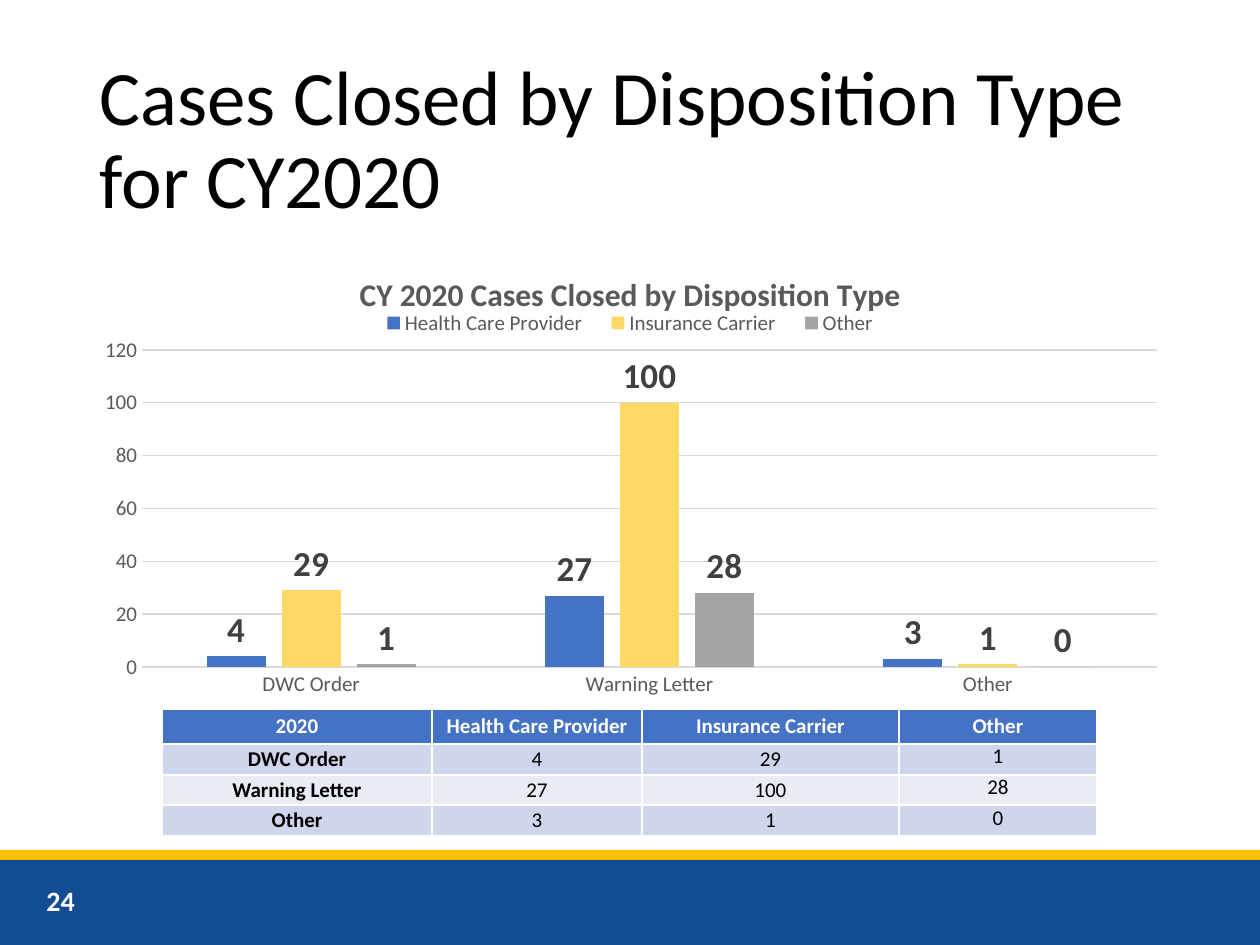
"""Build the slide on cases closed by disposition type."""
from typing import NamedTuple

from lxml import etree
from pptx import Presentation
from pptx.chart.data import CategoryChartData
from pptx.dml.color import RGBColor
from pptx.enum.chart import XL_CHART_TYPE, XL_LABEL_POSITION, XL_LEGEND_POSITION, XL_TICK_MARK
from pptx.enum.shapes import MSO_SHAPE
from pptx.enum.text import MSO_ANCHOR, MSO_AUTO_SIZE, PP_ALIGN
from pptx.oxml import parse_xml
from pptx.oxml.ns import nsdecls, qn
from pptx.util import Emu, Inches, Pt

RECTANGLE = MSO_SHAPE.RECTANGLE
COLUMNS = XL_CHART_TYPE.COLUMN_CLUSTERED
OUTSIDE_END = XL_LABEL_POSITION.OUTSIDE_END
LEGEND_BOTTOM = XL_LEGEND_POSITION.BOTTOM
NO_TICK = XL_TICK_MARK.NONE
TOP, MIDDLE = MSO_ANCHOR.TOP, MSO_ANCHOR.MIDDLE
LEFT, CENTER = PP_ALIGN.LEFT, PP_ALIGN.CENTER
NO_AUTOFIT = MSO_AUTO_SIZE.NONE

FONT = "Calibri"
PX = 914400 / 126
COLORS = {
    "black": "000000", "white": "FFFFFF", "navy": "124C95", "gold": "FFC000",
    "grid": "D9D9D9", "gray_text": "595959", "label": "404040",
    "blue": "4472C4", "yellow": "FFD966", "gray": "A5A5A5",
    "odd_row": "CFD5EA", "even_row": "E9EBF5",
}


class Box(NamedTuple):
    left: int
    top: int
    width: int
    height: int


class Band(NamedTuple):
    box: Box
    color: str


class Series(NamedTuple):
    name: str
    values: tuple[int, ...]
    color: str


BANDS = [Band(Box(0, 860, 1260, 85), "navy"), Band(Box(0, 850, 1260, 10), "gold")]
CHART_BOX = Box(87, 252, 1086, 457)
PLOT_BOX = Box(55, 98, 1015, 317)
HEADING_BOX = Box(267, 15, 543, 37)
LEGEND_BOX = Box(278, 57, 530, 28)
CATEGORIES = ["DWC Order", "Warning Letter", "Other"]
SERIES = [
    Series("Health Care Provider", (4, 27, 3), "blue"),
    Series("Insurance Carrier", (29, 100, 1), "yellow"),
    Series("Other", (1, 28, 0), "gray"),
]
COLUMN_WIDTHS = [270, 210, 257, 198]
ROW_HEIGHTS = [35, 31, 30, 30]


def px(length: int) -> Emu:
    return Emu(round(length * PX))


def rgb(name: str) -> RGBColor:
    return RGBColor.from_string(COLORS[name])


def emu_box(box: Box) -> list[Emu]:
    return [px(length) for length in box]


def style_font(font, size: int, color: str, bold: bool = False) -> None:
    font.name, font.size, font.bold = FONT, Pt(size), bold
    font.color.rgb = rgb(color)


def draw_band(slide, band: Band) -> None:
    shape = slide.shapes.add_shape(RECTANGLE, *emu_box(band.box))
    shape.shadow.inherit = False
    shape.fill.solid()
    shape.fill.fore_color.rgb = rgb(band.color)
    shape.line.fill.background()


def draw_title(slide, text: str, box: Box) -> None:
    title = slide.shapes.title
    title.left, title.top, title.width, title.height = emu_box(box)
    frame = title.text_frame
    frame.text = text
    frame.auto_size = NO_AUTOFIT
    frame.vertical_anchor = MIDDLE
    paragraph = frame.paragraphs[0]
    paragraph.alignment = LEFT
    paragraph.line_spacing = 0.9
    style_font(paragraph.runs[0].font, 44, "black")


def draw_page_number(slide, number: str, box: Box) -> None:
    frame = slide.shapes.add_textbox(*emu_box(box)).text_frame
    frame.word_wrap = True
    frame.vertical_anchor = MIDDLE
    frame.text = number
    style_font(frame.paragraphs[0].runs[0].font, 16, "white", True)


def set_layout(element, index: int, box: Box, inner: bool = False) -> None:
    for old in element.findall(qn("c:layout")):
        element.remove(old)
    target = '<c:layoutTarget val="inner"/>' if inner else ""
    totals = (CHART_BOX.width, CHART_BOX.height) * 2
    sizes = "".join(f'<c:{key} val="{length / total}"/>'
                    for key, length, total in zip("xywh", box, totals))
    element.insert(index, parse_xml(
        f'<c:layout {nsdecls("c")}><c:manualLayout>{target}'
        f'<c:xMode val="edge"/><c:yMode val="edge"/>{sizes}</c:manualLayout></c:layout>'))


def draw_chart(slide, heading: str) -> None:
    data = CategoryChartData()
    data.categories = CATEGORIES
    for series in SERIES:
        data.add_series(series.name, series.values)
    chart = slide.shapes.add_chart(COLUMNS, *emu_box(CHART_BOX), data).chart
    style_font(chart.font, 10, "black")

    title = chart.chart_title
    title.text_frame.text = heading
    style_font(title.text_frame.paragraphs[0].runs[0].font, 18, "gray_text", True)
    chart.has_legend = True
    chart.legend.position = LEGEND_BOTTOM
    chart.legend.include_in_layout = False
    style_font(chart.legend.font, 12, "gray_text")

    for axis in (chart.category_axis, chart.value_axis):
        axis.major_tick_mark = axis.minor_tick_mark = NO_TICK
        style_font(axis.tick_labels.font, 12, "gray_text")
    value_axis = chart.value_axis
    value_axis.minimum_scale, value_axis.maximum_scale, value_axis.major_unit = 0, 120, 20
    value_axis.format.line.fill.background()
    for line in (chart.category_axis.format.line, value_axis.major_gridlines.format.line):
        line.color.rgb = rgb("grid")
        line.width = Pt(0.75)

    plot = chart.plots[0]
    plot.vary_by_categories = False
    plot.gap_width, plot.overlap = 219, -27
    for column, series in zip(plot.series, SERIES):
        column.format.fill.solid()
        column.format.fill.fore_color.rgb = rgb(series.color)
        labels = column.data_labels
        labels.show_value = True
        labels.position = OUTSIDE_END
        style_font(labels.font, 20, "label", True)

    set_layout(plot._element.getparent(), 0, PLOT_BOX, inner=True)
    set_layout(title._element, 1, HEADING_BOX)
    set_layout(chart.legend._element, 1, LEGEND_BOX)


def add_borders(cell) -> None:
    properties = cell._tc.get_or_add_tcPr()
    for side in "LRTB":
        line = etree.SubElement(properties, qn(f"a:ln{side}"), w=str(Pt(1)))
        fill = etree.SubElement(line, qn("a:solidFill"))
        etree.SubElement(fill, qn("a:srgbClr"), val=COLORS["white"])


def draw_cell(cell, text: str, row: int, column: int) -> None:
    header, heading = row == 0, row == 0 or column == 0
    horizontal, vertical = (0.03, 0.02) if heading else (0.04, 0)
    cell.margin_left = cell.margin_right = Inches(horizontal)
    cell.margin_top = cell.margin_bottom = Inches(vertical)
    cell.vertical_anchor = TOP if column == len(SERIES) and not header else MIDDLE
    add_borders(cell)
    cell.fill.solid()
    cell.fill.fore_color.rgb = rgb("blue" if header else "odd_row" if row % 2 else "even_row")
    cell.text_frame.text = text
    paragraph = cell.text_frame.paragraphs[0]
    paragraph.alignment = CENTER
    style_font(paragraph.runs[0].font, 12, "white" if header else "black", heading)


def draw_table(slide, left: int, top: int) -> None:
    rows = [["2020", *(series.name for series in SERIES)]]
    for index, category in enumerate(CATEGORIES):
        rows.append([category, *(str(series.values[index]) for series in SERIES)])
    box = Box(left, top, sum(COLUMN_WIDTHS), sum(ROW_HEIGHTS))
    table = slide.shapes.add_table(len(rows), len(rows[0]), *emu_box(box)).table
    for column, width in zip(table.columns, COLUMN_WIDTHS):
        column.width = px(width)
    for row, height in zip(table.rows, ROW_HEIGHTS):
        row.height = px(height)
    for row, texts in enumerate(rows):
        for column, text in enumerate(texts):
            draw_cell(table.cell(row, column), text, row, column)


def main() -> None:
    presentation = Presentation()
    presentation.slide_width, presentation.slide_height = px(1260), px(945)
    slide = presentation.slides.add_slide(presentation.slide_layouts[5])
    for band in BANDS:
        draw_band(slide, band)
    draw_page_number(slide, "24", Box(34, 875, 284, 50))
    draw_title(slide, "Cases Closed by Disposition Type for CY2020", Box(87, 51, 1086, 183))
    draw_chart(slide, "CY 2020 Cases Closed by Disposition Type")
    draw_table(slide, 162, 709)
    presentation.save("out.pptx")


if __name__ == "__main__":
    main()
